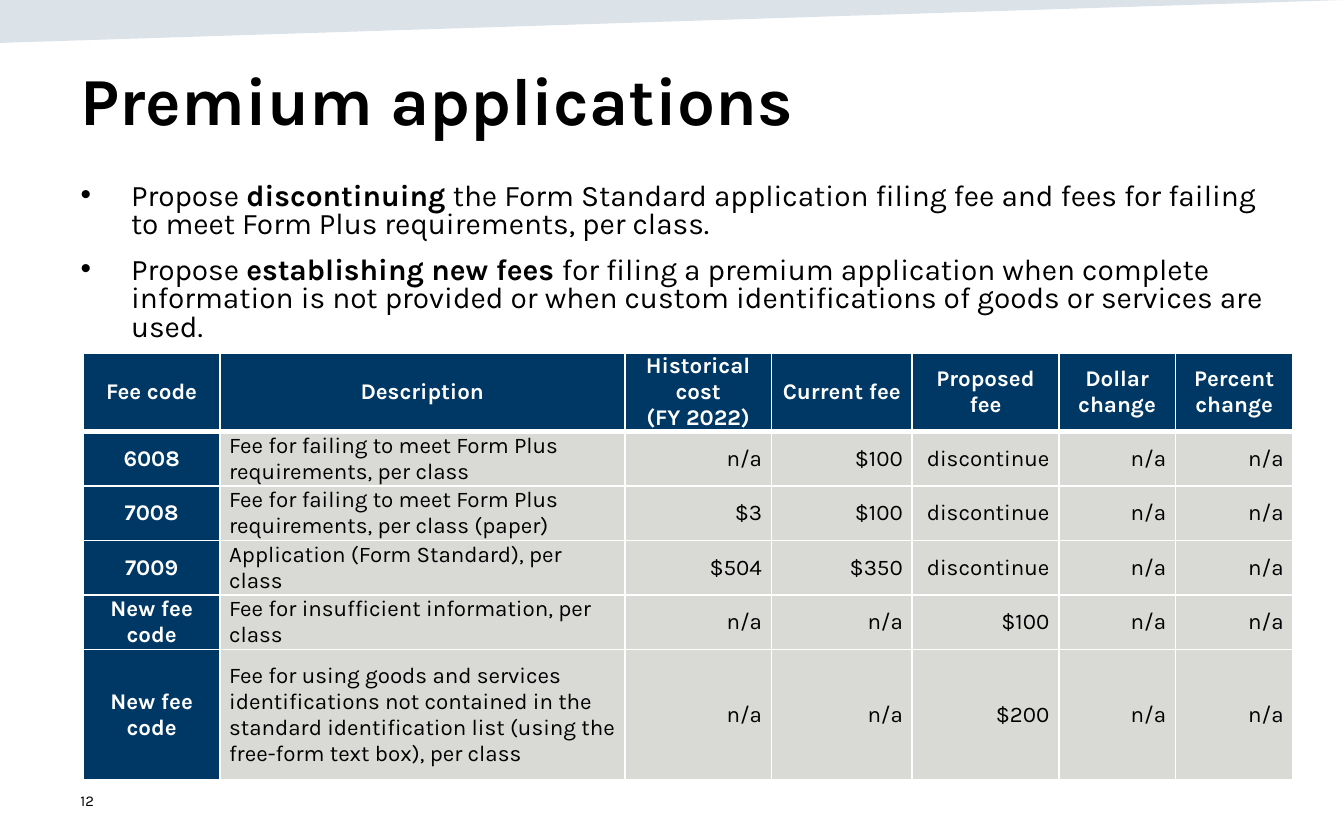
"""Build the premium applications fee slide."""
import dataclasses

import lxml.etree
import pptx
import pptx.dml.color
import pptx.enum.text
import pptx.oxml.ns
import pptx.util

Pt = pptx.util.Pt
RGB = pptx.dml.color.RGBColor.from_string
ALIGN = pptx.enum.text.PP_ALIGN
ANCHOR = pptx.enum.text.MSO_ANCHOR
qn = pptx.oxml.ns.qn


@dataclasses.dataclass(frozen=True)
class Theme:
    font: str = "Karla"
    ink: str = "000000"
    paper: str = "FFFFFF"
    navy: str = "003865"
    grey: str = "D9D9D6"
    band: str = "164469"
    title: float = 36
    body: float = 16
    cell: float = 12
    number: float = 8


THEME = Theme()

BULLETS = [
    ("Propose ", "discontinuing", " the Form Standard application filing fee and fees "
     "for failing to meet Form Plus requirements, per class."),
    ("Propose ", "establishing new fees ", "for filing a premium application when complete "
     "information is not provided or when custom identifications of goods or services are used."),
]

COLUMNS = [73, 217, 78.5, 75.5, 78.5, 62.5, 63]
HEIGHTS = [42, 29.2, 29.2, 29.2, 29.2, 70]
FEES = [
    ("Fee code", "Description", "Historical cost\n(FY 2022)", "Current fee ",
     "Proposed fee", "Dollar change", "Percent change"),
    ("6008", "Fee for failing to meet Form Plus requirements, per class",
     "n/a", "$100", "discontinue", "n/a", "n/a"),
    ("7008", "Fee for failing to meet Form Plus requirements, per class (paper)",
     "$3", "$100", "discontinue", "n/a", "n/a"),
    ("7009", "Application (Form Standard), per class",
     "$504", "$350", "discontinue", "n/a", "n/a"),
    ("New fee code", "Fee for insufficient information, per class",
     "n/a", "n/a", "$100", "n/a", "n/a"),
    ("New fee code", "Fee for using goods and services identifications not contained in "
     "the standard identification list (using the free-form text box), per class",
     "n/a", "n/a", "$200", "n/a", "n/a"),
]


def place(sp, left, top, width, height):
    """Move and size a shape, in points."""
    sp.left, sp.top, sp.width, sp.height = map(Pt, (left, top, width, height))


def format_run(r, size, color=THEME.ink, bold=False):
    """Give a run its font, size, colour and weight."""
    r.font.name = THEME.font
    r.font.size = Pt(size)
    r.font.bold = bold
    r.font.color.rgb = RGB(color)


def add_top_band(s):
    """Draw the translucent wedge along the top edge."""
    builder = s.shapes.build_freeform(0, 0, scale=Pt(1))
    builder.add_line_segments([(0, 23), (720, 0)], close=True)
    sp = builder.convert_to_shape()
    sp.shadow.inherit = False
    sp.line.fill.background()
    sp.fill.solid()
    sp.fill.fore_color.rgb = RGB(THEME.band)
    color = sp.fill._xPr.find(qn("a:solidFill"))[0]
    lxml.etree.SubElement(color, qn("a:alpha"), val="15000")


def set_title(s, text):
    """Fill the title placeholder."""
    sp = s.shapes.title
    place(sp, 36, 24.5, 648, 75)
    tf = sp.text_frame
    tf.text = text
    tf.vertical_anchor = ANCHOR.TOP
    tf.margin_top = Pt(7)
    tf.auto_size = pptx.enum.text.MSO_AUTO_SIZE.NONE
    p = tf.paragraphs[0]
    p.alignment = ALIGN.LEFT
    format_run(p.runs[0], THEME.title, bold=True)


def set_bullets(s, items):
    """Fill the body placeholder with bullets whose middle part is bold."""
    sp = s.placeholders[1]
    place(sp, 36, 94.5, 648, 298)
    tf = sp.text_frame
    tf.auto_size = pptx.enum.text.MSO_AUTO_SIZE.NONE
    for i, parts in enumerate(items):
        p = tf.add_paragraph() if i else tf.paragraphs[0]
        p.line_spacing = 0.8
        p.space_before = Pt(9)
        pPr = p._p.get_or_add_pPr()
        pPr.set("marL", str(Pt(27)))
        pPr.set("indent", str(-Pt(27)))
        lxml.etree.SubElement(pPr, qn("a:buChar"), char="•")
        for j, part in enumerate(parts):
            r = p.add_run()
            r.text = part
            format_run(r, THEME.body, bold=j == 1)


def set_borders(cell, top, bottom):
    """Line a cell in white with the given top and bottom widths."""
    tcPr = cell._tc.get_or_add_tcPr()
    for side, width in (("L", 1), ("R", 1), ("T", top), ("B", bottom)):
        ln = lxml.etree.SubElement(tcPr, qn(f"a:ln{side}"), w=str(Pt(width)))
        fill = lxml.etree.SubElement(ln, qn("a:solidFill"))
        lxml.etree.SubElement(fill, qn("a:srgbClr"), val=THEME.paper)


def set_cell(cell, text, row, col):
    """Write and style one table cell by its row and column."""
    heading = row == 0 or col == 0
    align = ALIGN.CENTER if heading else ALIGN.LEFT if col == 1 else ALIGN.RIGHT
    set_borders(cell, 3 if row == 1 else 1, 3 if row == 0 else 1)
    cell.fill.solid()
    cell.fill.fore_color.rgb = RGB(THEME.navy if heading else THEME.grey)
    cell.vertical_anchor = ANCHOR.MIDDLE
    cell.margin_left = cell.margin_right = Pt(5)
    cell.margin_top = cell.margin_bottom = 0
    cell.text_frame.text = text
    for p in cell.text_frame.paragraphs:
        p.alignment = align
        format_run(p.runs[0], THEME.cell, THEME.paper if heading else THEME.ink, heading)


def add_fee_table(s, rows):
    """Add the fee table."""
    frame = s.shapes.add_table(len(rows), len(COLUMNS), Pt(44.75), Pt(189),
                               Pt(sum(COLUMNS)), Pt(sum(HEIGHTS)))
    table = frame.table
    table.horz_banding = False
    for column, width in zip(table.columns, COLUMNS):
        column.width = Pt(width)
    for i, (values, height) in enumerate(zip(rows, HEIGHTS)):
        table.rows[i].height = Pt(height)
        for j, value in enumerate(values):
            set_cell(table.cell(i, j), value, i, j)


def add_page_number(s, text):
    """Add the page number at the lower left."""
    sp = s.shapes.add_textbox(Pt(36), Pt(417), Pt(162), Pt(24))
    tf = sp.text_frame
    tf.word_wrap = True
    tf.vertical_anchor = ANCHOR.MIDDLE
    tf.text = text
    format_run(tf.paragraphs[0].runs[0], THEME.number)


def main():
    """Build and save the slide."""
    prs = pptx.Presentation()
    prs.slide_width, prs.slide_height = Pt(720), Pt(450)
    s = prs.slides.add_slide(prs.slide_layouts[1])
    add_top_band(s)
    set_title(s, "Premium applications")
    set_bullets(s, BULLETS)
    add_fee_table(s, FEES)
    add_page_number(s, "12")
    prs.save("out.pptx")


if __name__ == "__main__":
    main()
